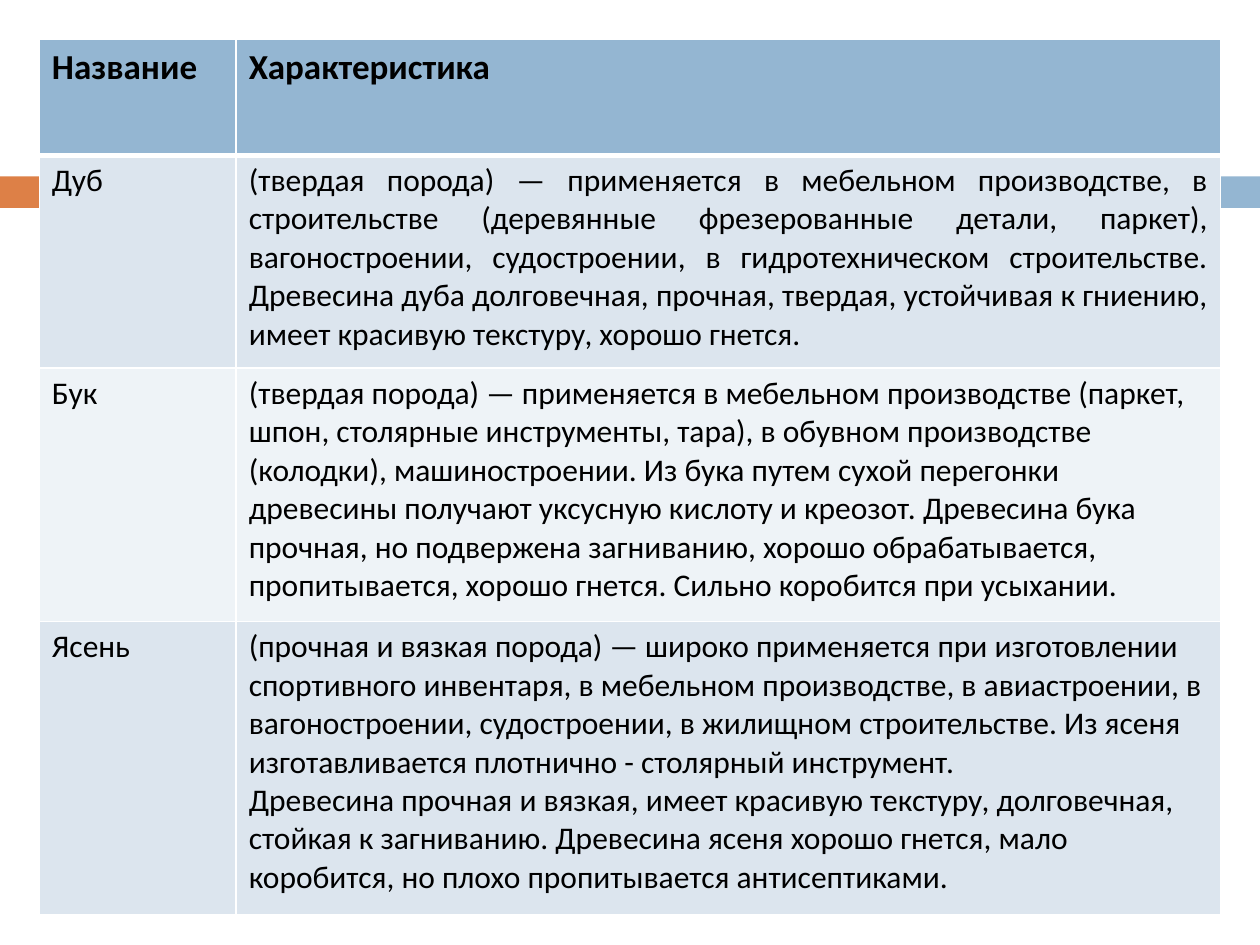
"""Builds a slide with a table of hardwoods and their uses."""
import pptx
import pptx.dml.color
import pptx.enum.shapes
import pptx.enum.text
import pptx.oxml
import pptx.oxml.ns
import pptx.util

Pt = pptx.util.Pt
RGB = pptx.dml.color.RGBColor
ALIGN = pptx.enum.text.PP_ALIGN

BLACK = RGB(0x00, 0x00, 0x00)
BLUE = RGB(0x94, 0xB6, 0xD2)
ORANGE = RGB(0xDD, 0x80, 0x47)
DARK = RGB(0xDC, 0xE5, 0xEE)
LIGHT = RGB(0xEE, 0xF3, 0xF7)
WHITE = RGB(0xFF, 0xFF, 0xFF)

ROWS = [
    ("Название", "Характеристика"),
    ("Дуб", "(твердая порода) — применяется в мебельном производстве, в "
     "строительстве (деревянные фрезерованные детали, паркет), "
     "вагоностроении, судостроении, в гидротехническом строительстве. "
     "Древесина дуба долговечная, прочная, твердая, устойчивая к гниению, "
     "имеет красивую текстуру, хорошо гнется."),
    ("Бук", "(твердая порода) — применяется в мебельном производстве (паркет, "
     "шпон, столярные инструменты, тара), в обувном производстве "
     "(колодки), машиностроении. Из бука путем сухой перегонки "
     "древесины получают уксусную кислоту и креозот. Древесина бука "
     "прочная, но подвержена загниванию, хорошо обрабатывается, "
     "пропитывается, хорошо гнется. Сильно коробится при усыхании."),
    ("Ясень", "(прочная и вязкая порода) — широко применяется при изготовлении "
     "спортивного инвентаря, в мебельном производстве, в авиастроении, в "
     "вагоностроении, судостроении, в жилищном строительстве. Из ясеня "
     "изготавливается плотнично - столярный инструмент.\n"
     "Древесина прочная и вязкая, имеет красивую текстуру, долговечная, "
     "стойкая к загниванию. Древесина ясеня хорошо гнется, мало "
     "коробится, но плохо пропитывается антисептиками."),
]
WIDTHS = [112.5, 562.5]
HEIGHTS = [66.2, 121.7, 144.7, 167.8]
EDGE = 22.5
BARS = [(0, 42, ORANGE), (46.8, 673.2, BLUE)]
BAR_TOP, BAR_HIGH = 100.8, 18
HEAD = {"name": "Calibri", "size": Pt(20), "bold": True}
BODY = {"name": "Calibri", "size": Pt(18), "bold": False}


def add_bar(slide, left, width, color):
    bar = slide.shapes.add_shape(
        pptx.enum.shapes.MSO_SHAPE.RECTANGLE,
        Pt(left), Pt(BAR_TOP), Pt(width), Pt(BAR_HIGH))
    bar.shadow.inherit = False
    bar.fill.solid()
    bar.fill.fore_color.rgb = color
    bar.line.fill.background()


def add_lines(cell, top, low):
    props = cell._tc.get_or_add_tcPr()
    for side, width in (("L", 1), ("R", 1), ("T", top), ("B", low)):
        props.append(pptx.oxml.parse_xml(
            f'<a:ln{side} {pptx.oxml.ns.nsdecls("a")} w="{Pt(width)}">'
            f'<a:solidFill><a:srgbClr val="{WHITE}"/></a:solidFill>'
            f'</a:ln{side}>'))


def fill_cell(cell, text, row, col):
    add_lines(cell, 3 if row == 1 else 1, 3 if row == 0 else 1)
    cell.fill.solid()
    cell.fill.fore_color.rgb = BLUE if row == 0 else DARK if row % 2 else LIGHT
    para = cell.text_frame.paragraphs[0]
    para.text = text
    para.alignment = ALIGN.JUSTIFY if (row, col) == (1, 1) else ALIGN.LEFT
    for run in para.runs:
        for key, value in (HEAD if row == 0 else BODY).items():
            setattr(run.font, key, value)
        run.font.color.rgb = BLACK


def add_grid(slide):
    grid = slide.shapes.add_table(
        len(ROWS), len(WIDTHS), Pt(EDGE), Pt(EDGE),
        Pt(sum(WIDTHS)), Pt(sum(HEIGHTS))).table
    for col, width in enumerate(WIDTHS):
        grid.columns[col].width = Pt(width)
    for row, (texts, high) in enumerate(zip(ROWS, HEIGHTS)):
        grid.rows[row].height = Pt(high)
        for col, text in enumerate(texts):
            fill_cell(grid.cell(row, col), text, row, col)


def main():
    deck = pptx.Presentation()
    deck.slide_width, deck.slide_height = Pt(720), Pt(540)
    slide = deck.slides.add_slide(deck.slide_layouts[6])
    for bar in BARS:
        add_bar(slide, *bar)
    add_grid(slide)
    deck.save("out.pptx")


if __name__ == "__main__":
    main()
